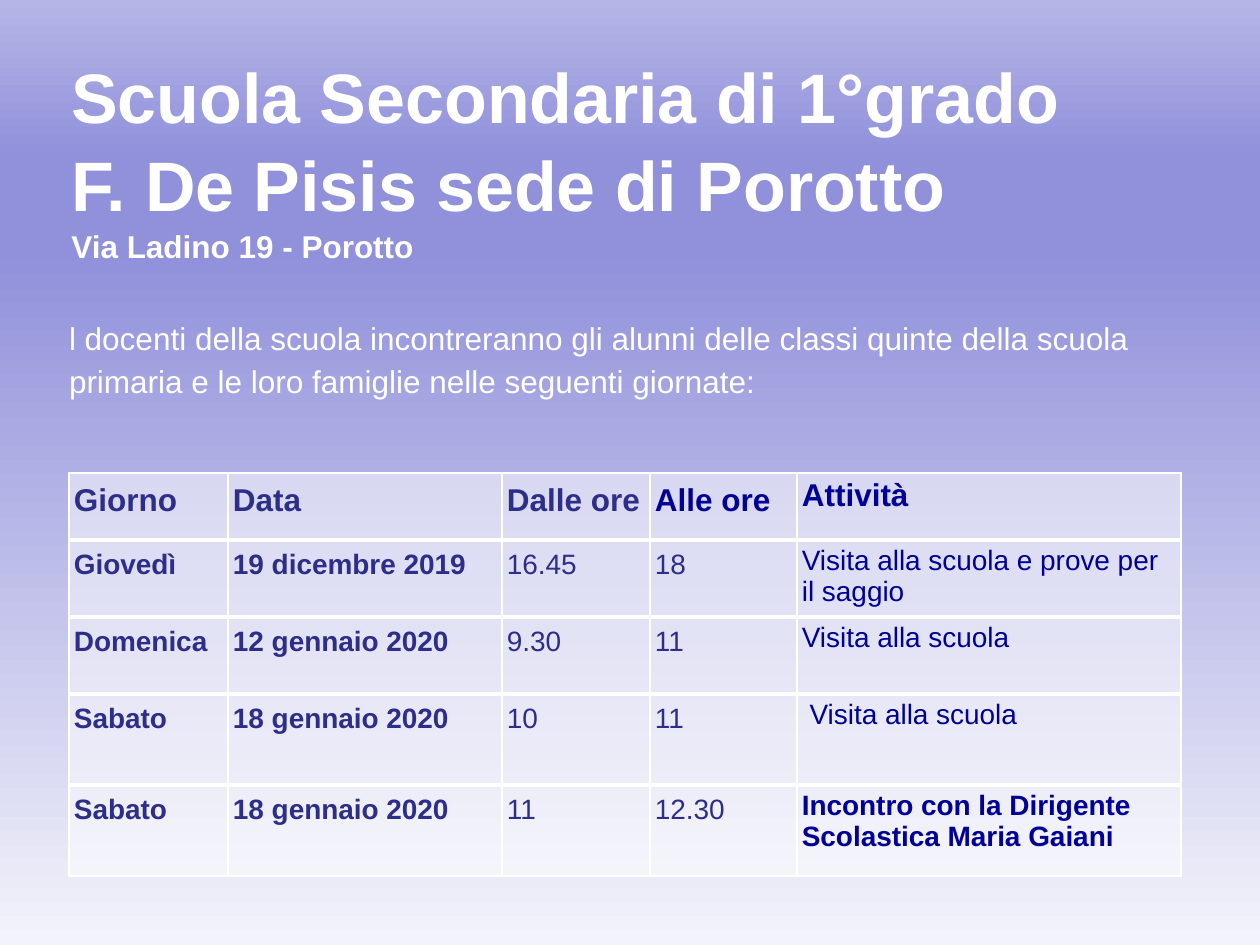
"""Build the school open-day slide with its calendar table."""
from lxml import etree
from pptx import Presentation
from pptx import util as u
from pptx.dml.color import RGBColor
from pptx.enum import text
from pptx.oxml import parse_xml
from pptx.oxml.ns import qn

PX = 914400 / 126
COLORS = {"white": "FFFFFF", "indigo": "2D2D8A", "blue": "000099",
          "pale": "F3F3FB", "violet": "9090DB", "lilac": "B5B5E7"}
NS = 'xmlns:a="http://schemas.openxmlformats.org/drawingml/2006/main"'


def px(value):
    return u.Emu(round(value * PX))


def style(paragraph, size, color, bold=False):
    for run in paragraph.runs:
        run.font.name = "Arial"
        run.font.size = u.Pt(size)
        run.font.bold = bold
        run.font.color.rgb = RGBColor.from_string(COLORS[color])


presentation = Presentation()
presentation.slide_width, presentation.slide_height = px(1260), px(945)
slide = presentation.slides.add_slide(presentation.slide_layouts[6])

background = slide.background.fill
background.gradient()
background.gradient_angle = 90
stop_list = slide.background._cSld.find(".//" + qn("a:gsLst"))
for stop in list(stop_list):
    stop_list.remove(stop)
for position, color in ((0, "pale"), (74, "violet"), (83, "violet"), (100, "lilac")):
    stop_list.append(parse_xml(
        f'<a:gs {NS} pos="{position * 1000}"><a:srgbClr val="{COLORS[color]}"/></a:gs>'))

title = slide.shapes.add_textbox(px(59), px(59), px(1134), px(197))
title.text_frame.word_wrap = True
title.text_frame.vertical_anchor = text.MSO_ANCHOR.MIDDLE
paragraph = title.text_frame.paragraphs[0]
paragraph.text = "Scuola Secondaria di 1°grado\vF. De Pisis sede di Porotto\vVia Ladino 19 - Porotto"
paragraph.line_spacing = 1.04
style(paragraph, 40, "white", bold=True)
paragraph.runs[-1].font.size = u.Pt(18)

intro = slide.shapes.add_textbox(px(69), px(315), px(1113), px(83))
frame = intro.text_frame
frame.word_wrap = True
frame.vertical_anchor = text.MSO_ANCHOR.MIDDLE
frame.margin_left = frame.margin_right = frame.margin_top = frame.margin_bottom = 0
paragraph = frame.paragraphs[0]
paragraph.text = ("l docenti della scuola incontreranno gli alunni delle classi quinte "
                  "della scuola primaria e le loro famiglie nelle seguenti giornate:")
paragraph.line_spacing = 1.14
style(paragraph, 18, "white")

rows = [
    ("Giorno", "Data", "Dalle ore", "Alle ore", "Attività"),
    ("Giovedì", "19 dicembre 2019", "16.45", "18", "Visita alla scuola e prove per il saggio"),
    ("Domenica", "12 gennaio 2020", "9.30", "11", "Visita alla scuola"),
    ("Sabato", "18 gennaio 2020", "10", "11", " Visita alla scuola"),
    ("Sabato", "18 gennaio 2020", "11", "12.30",
     "Incontro con la Dirigente Scolastica Maria Gaiani"),
]
column_widths = (159, 274, 148, 147, 384)
row_heights = (67, 77, 77, 91, 91)
last_row, last_column = len(rows) - 1, len(column_widths) - 1

table = slide.shapes.add_table(len(rows), len(column_widths), px(69), px(473),
                               px(sum(column_widths)), px(sum(row_heights))).table
table.horz_banding = False
for column, width in zip(table.columns, column_widths):
    column.width = px(width)
for row, height in zip(table.rows, row_heights):
    row.height = px(height)

for r, values in enumerate(rows):
    for c, value in enumerate(values):
        cell = table.cell(r, c)
        cell.margin_left = cell.margin_right = px(5)
        cell.margin_top = cell.margin_bottom = px(5)
        paragraph = cell.text_frame.paragraphs[0]
        paragraph.text = value
        if c < last_column:
            paragraph.line_spacing = 1.13
            paragraph.space_after = u.Pt(9)
        is_blue = c == last_column or (r, c) == (0, 3)
        is_bold = r == 0 or c < 2 or (r, c) == (last_row, last_column)
        style(paragraph, 18 if r == 0 else 16, "blue" if is_blue else "indigo", is_bold)

        cell.fill.solid()
        cell.fill.fore_color.rgb = RGBColor.from_string(COLORS["white"])
        properties = cell._tc.tcPr
        fill_color = properties.find(".//" + qn("a:srgbClr"))
        etree.SubElement(fill_color, qn("a:alpha")).set("val", "50000")
        borders = {"L": 1, "R": 1, "T": 1 if r == 0 else 3, "B": 1 if r == last_row else 3}
        for index, (side, points) in enumerate(borders.items()):
            properties.insert(index, parse_xml(
                f'<a:ln{side} {NS} w="{u.Pt(points)}"><a:solidFill>'
                f'<a:srgbClr val="{COLORS["white"]}"/></a:solidFill></a:ln{side}>'))

presentation.save("out.pptx")
